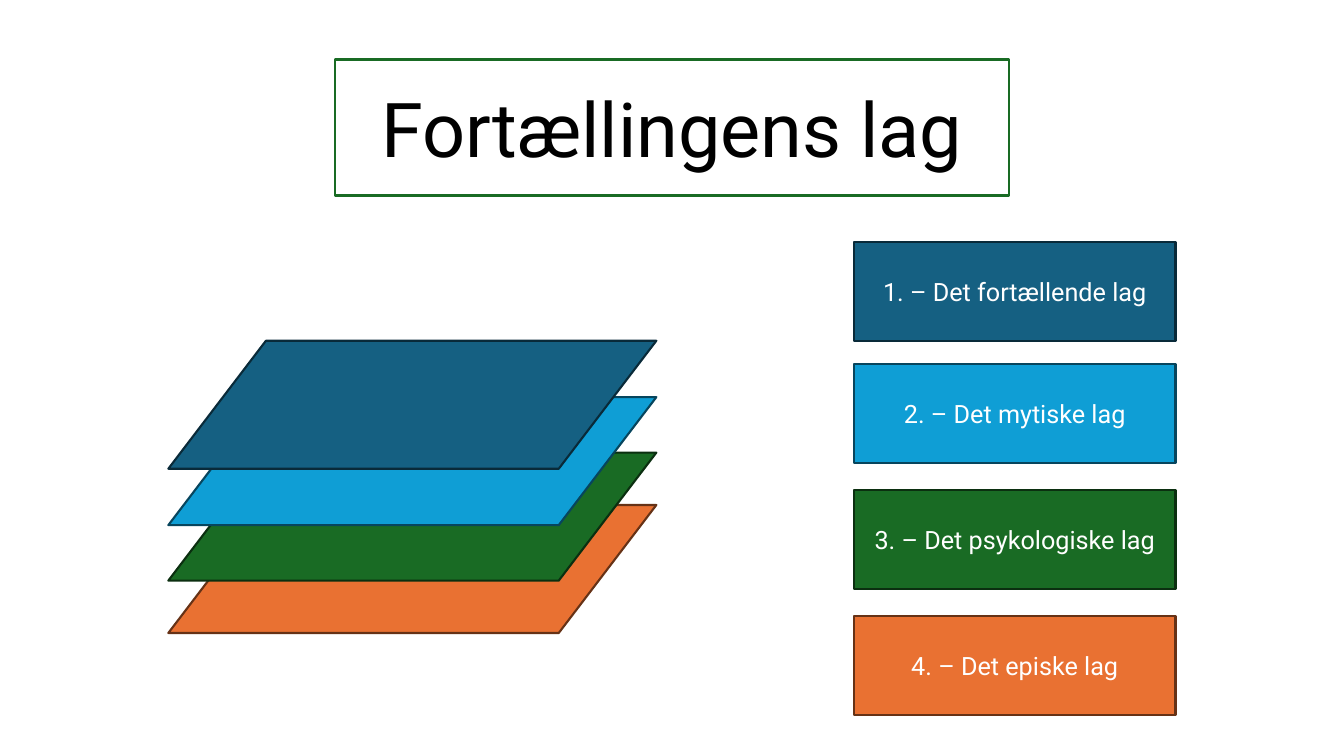
import pptx
import pptx.dml.color
import pptx.enum.shapes
import pptx.enum.text
import pptx.util

RGBColor = pptx.dml.color.RGBColor
Shape = pptx.enum.shapes.MSO_SHAPE

WHITE = RGBColor(0xFF, 0xFF, 0xFF)
BLACK = RGBColor(0x00, 0x00, 0x00)
NAVY = RGBColor(0x15, 0x60, 0x82)
NAVY_EDGE = RGBColor(0x09, 0x2A, 0x39)
SKY = RGBColor(0x0F, 0x9E, 0xD5)
SKY_EDGE = RGBColor(0x07, 0x45, 0x5D)
GREEN = RGBColor(0x19, 0x6B, 0x24)
GREEN_EDGE = RGBColor(0x0B, 0x2F, 0x10)
ORANGE = RGBColor(0xE9, 0x71, 0x32)
ORANGE_EDGE = RGBColor(0x66, 0x32, 0x16)

LAYERS = [
    ("Det fortællende lag", NAVY, NAVY_EDGE, 45.07, 32),
    ("Det mytiske lag", SKY, SKY_EDGE, 52.53, 48.13),
    ("Det psykologiske lag", GREEN, GREEN_EDGE, 59.87, 64.8),
    ("Det episke lag", ORANGE, ORANGE_EDGE, 66.8, 81.47),
]


class LayerSlide:
    """Draws on one slide, with lengths in percent of its width and height."""

    font_name = "Roboto"
    line_width = pptx.util.Pt(1.5)

    def __init__(self, presentation):
        self.column = presentation.slide_width / 100
        self.row = presentation.slide_height / 100
        self.slide = presentation.slides.add_slide(presentation.slide_layouts[5])

    def box(self, left, top, width, height):
        return (round(left * self.column), round(top * self.row),
                round(width * self.column), round(height * self.row))

    def paint(self, shape, fill, edge):
        shape.fill.solid()
        shape.fill.fore_color.rgb = fill
        shape.line.color.rgb = edge
        shape.line.width = self.line_width

    def label(self, shape, text, size, color):
        frame = shape.text_frame
        frame.text = text
        frame.word_wrap = True
        frame.auto_size = pptx.enum.text.MSO_AUTO_SIZE.NONE
        frame.vertical_anchor = pptx.enum.text.MSO_ANCHOR.MIDDLE
        paragraph = frame.paragraphs[0]
        paragraph.alignment = pptx.enum.text.PP_ALIGN.CENTER
        font = paragraph.runs[0].font
        font.name = self.font_name
        font.size = pptx.util.Pt(size)
        font.color.rgb = color

    def title(self, text, box, edge):
        shape = self.slide.shapes.title
        shape.left, shape.top, shape.width, shape.height = self.box(*box)
        self.paint(shape, WHITE, edge)
        self.label(shape, text, 54, BLACK)

    def stack(self):
        return self.slide.shapes.add_group_shape()

    def sheet(self, stack, box, fill, edge):
        shape = stack.shapes.add_shape(Shape.FLOWCHART_DATA, *self.box(*box))
        shape.shadow.inherit = False
        self.paint(shape, fill, edge)

    def card(self, text, box, fill, edge):
        shape = self.slide.shapes.add_shape(Shape.RECTANGLE, *self.box(*box))
        shape.shadow.inherit = False
        self.paint(shape, fill, edge)
        self.label(shape, text, 18, WHITE)


def main():
    presentation = pptx.Presentation()
    presentation.slide_width = pptx.util.Inches(13.33)
    presentation.slide_height = pptx.util.Inches(7.5)
    page = LayerSlide(presentation)

    page.title("Fortællingens lag", (24.91, 7.87, 50.19, 18), GREEN)

    stack = page.stack()
    for name, fill, edge, sheet_top, card_top in reversed(LAYERS):
        page.sheet(stack, (12.53, sheet_top, 36.31, 16.93), fill, edge)

    for number, (name, fill, edge, sheet_top, card_top) in enumerate(LAYERS, 1):
        page.card(f"{number}. – {name}", (63.54, card_top, 23.93, 13.07), fill, edge)

    presentation.save("out.pptx")


if __name__ == "__main__":
    main()
